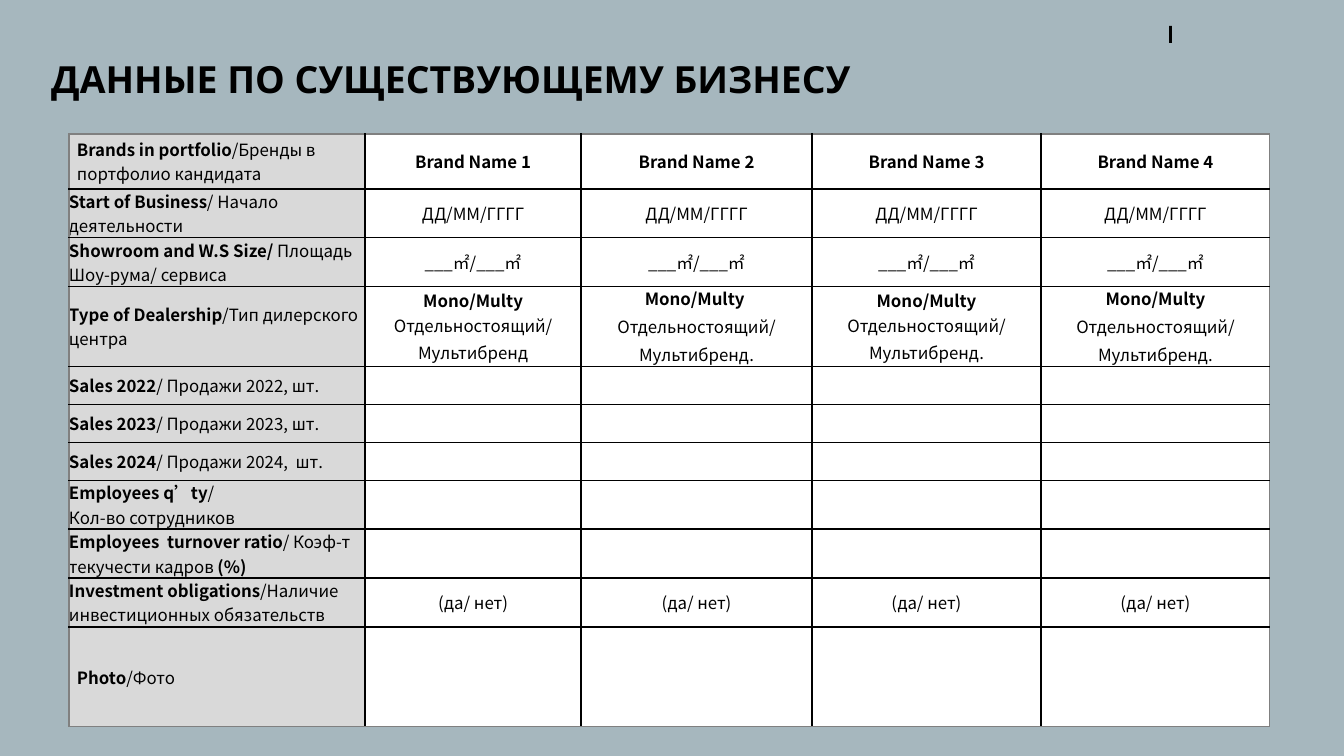
from dataclasses import dataclass

from lxml.etree import SubElement
from pptx import Presentation
from pptx.dml.color import RGBColor
from pptx.enum.shapes import MSO_SHAPE as Shape
from pptx.enum.text import MSO_ANCHOR as Anchor, PP_ALIGN as Align
from pptx.oxml.ns import qn
from pptx.util import Emu, Pt

BLACK, WHITE, GRAY = "000000", "FFFFFF", "808080"
LABEL_FILL, BACKGROUND = "D9D9D9", "A6B7BE"
TABLE_FONT, TITLE_FONT = "Noto Sans CJK SC", "Noto Sans"
FONT_SIZE = 9
COLUMN_WIDTHS = (296, 216, 231, 229, 229)
BRANDS = len(COLUMN_WIDTHS) - 1


@dataclass(frozen=True)
class Span:
    text: str
    bold: bool = False


Para = tuple[Span, ...]
Content = tuple[Para, ...]


@dataclass(frozen=True)
class Row:
    height: int
    label: Content
    values: tuple[Content, ...] = ((),) * BRANDS
    label_inset: int = 0
    vertical_inset: int = 0
    space_before: float = 1.8


def px(length: int) -> Emu:
    return Emu(round(length * 914400 / 134.4))


def color(code: str) -> RGBColor:
    return RGBColor.from_string(code)


def label(english: str, russian: str, *more: Span) -> Content:
    return ((Span(english, True), Span(russian), *more),)


def same(text: str) -> tuple[Content, ...]:
    """The same plain value for every brand."""
    return (((Span(text),),),) * BRANDS


MONO, DETACHED = Span("Mono/Multy ", True), Span("Отдельностоящий/")
MULTI = Span("Мультибренд.")
DEALERSHIPS = (
    ((MONO, DETACHED), (Span("Мультибренд"),)),
    ((MONO,), (DETACHED,), (MULTI,)),
    ((MONO, DETACHED), (MULTI,)),
    ((Span("Mono/Multy", True),), (DETACHED,), (MULTI,)),
)

ROWS = (
    Row(44, label("Brands in portfolio", "/Бренды в портфолио кандидата"),
        tuple(((Span(f"Brand Name {n}", True),),) for n in range(1, BRANDS + 1)),
        label_inset=8, vertical_inset=3),
    Row(38, label("Start of Business", "/ Начало деятельности"), same("ДД/ММ/ГГГГ")),
    Row(38, label("Showroom and W.S Size/ ", "Площадь Шоу-рума/ сервиса"),
        same("___㎡/___㎡")),
    Row(64, label("Type of Dealership", "/Тип дилерского центра"), DEALERSHIPS),
    Row(38, label("Sales 2022", "/ Продажи 2022, шт.")),
    Row(38, label("Sales 2023", "/ Продажи 2023, шт.")),
    Row(38, label("Sales 2024", "/ Продажи 2024,  шт.")),
    Row(38, label("Employees q’ty", "/") + ((Span("Кол-во сотрудников"),),),
        space_before=0),
    Row(38, label("Employees  turnover ratio", "/ Коэф-т текучести кадров ",
                  Span("(%)", True))),
    Row(38, label("Investment obligations", "/Наличие инвестиционных обязательств"),
        same("(да/ нет)")),
    Row(100, label("Photo", "/Фото"), label_inset=8),
)


def add_border(cell, side: str, code: str, width: float) -> None:
    line = SubElement(cell._tc.get_or_add_tcPr(), qn(f"a:ln{side}"), w=str(Pt(width)))
    fill = SubElement(line, qn("a:solidFill"))
    SubElement(fill, qn("a:srgbClr"), val=code)


def fill_text(cell, content: Content, align: Align, space_before: float) -> None:
    frame = cell.text_frame
    if not content:
        # An empty cell keeps its row low only through its end-of-paragraph size.
        SubElement(frame.paragraphs[0]._p, qn("a:endParaRPr"), sz=str(FONT_SIZE * 100))
    for index, spans in enumerate(content):
        para = frame.add_paragraph() if index else frame.paragraphs[0]
        para.alignment = align
        if index:
            para.space_before = Pt(space_before)
        for span in spans:
            run = para.add_run()
            run.text = span.text
            font = run.font
            font.bold = span.bold
            font.size = Pt(FONT_SIZE)
            font.color.rgb = color(BLACK)
            font.name = TABLE_FONT
            SubElement(run._r.get_or_add_rPr(), qn("a:ea"), typeface=TABLE_FONT)


def add_table(page, left: int, top: int) -> None:
    last_row, last_column = len(ROWS) - 1, BRANDS
    table = page.shapes.add_table(
        len(ROWS), len(COLUMN_WIDTHS), px(left), px(top),
        px(sum(COLUMN_WIDTHS)), px(sum(row.height for row in ROWS))).table
    table.first_row = table.horz_banding = False
    for column, width in zip(table.columns, COLUMN_WIDTHS):
        column.width = px(width)
    for y, row in enumerate(ROWS):
        table.rows[y].height = px(row.height)
        for x, content in enumerate((row.label, *row.values)):
            cell = table.cell(y, x)
            outer = {"L": x == 0, "R": x == last_column, "T": y == 0, "B": y == last_row}
            for side, is_outer in outer.items():
                add_border(cell, side, *((GRAY, 0.75) if is_outer else (BLACK, 1)))
            cell.fill.solid()
            cell.fill.fore_color.rgb = color(WHITE if x else LABEL_FILL)
            cell.vertical_anchor = Anchor.MIDDLE
            cell.margin_left = cell.margin_right = px(8 if x else row.label_inset)
            cell.margin_top = cell.margin_bottom = px(row.vertical_inset)
            fill_text(cell, content, Align.CENTER if x else Align.LEFT, row.space_before)


def add_title(page, text: str) -> None:
    box = page.shapes.add_textbox(px(38), px(50), px(911), px(73))
    box.text_frame.word_wrap = True
    para = box.text_frame.paragraphs[0]
    para.text = text
    para.font.name = TITLE_FONT
    para.font.size = Pt(20)
    para.font.bold = True
    para.font.color.rgb = color(BLACK)


def add_corner_bar(page) -> None:
    bar = page.shapes.add_shape(Shape.RECTANGLE, px(1169), px(26), px(3), px(17))
    bar.shadow.inherit = False
    bar.fill.solid()
    bar.fill.fore_color.rgb = color(BLACK)
    bar.line.fill.background()


def main() -> None:
    deck = Presentation()
    deck.slide_width, deck.slide_height = px(1344), px(756)
    page = deck.slides.add_slide(deck.slide_layouts[6])
    page.background.fill.solid()
    page.background.fill.fore_color.rgb = color(BACKGROUND)
    add_corner_bar(page)
    add_table(page, 69, 134)
    add_title(page, "ДАННЫЕ ПО СУЩЕСТВУЮЩЕМУ БИЗНЕСУ")
    deck.save("out.pptx")


if __name__ == "__main__":
    main()
